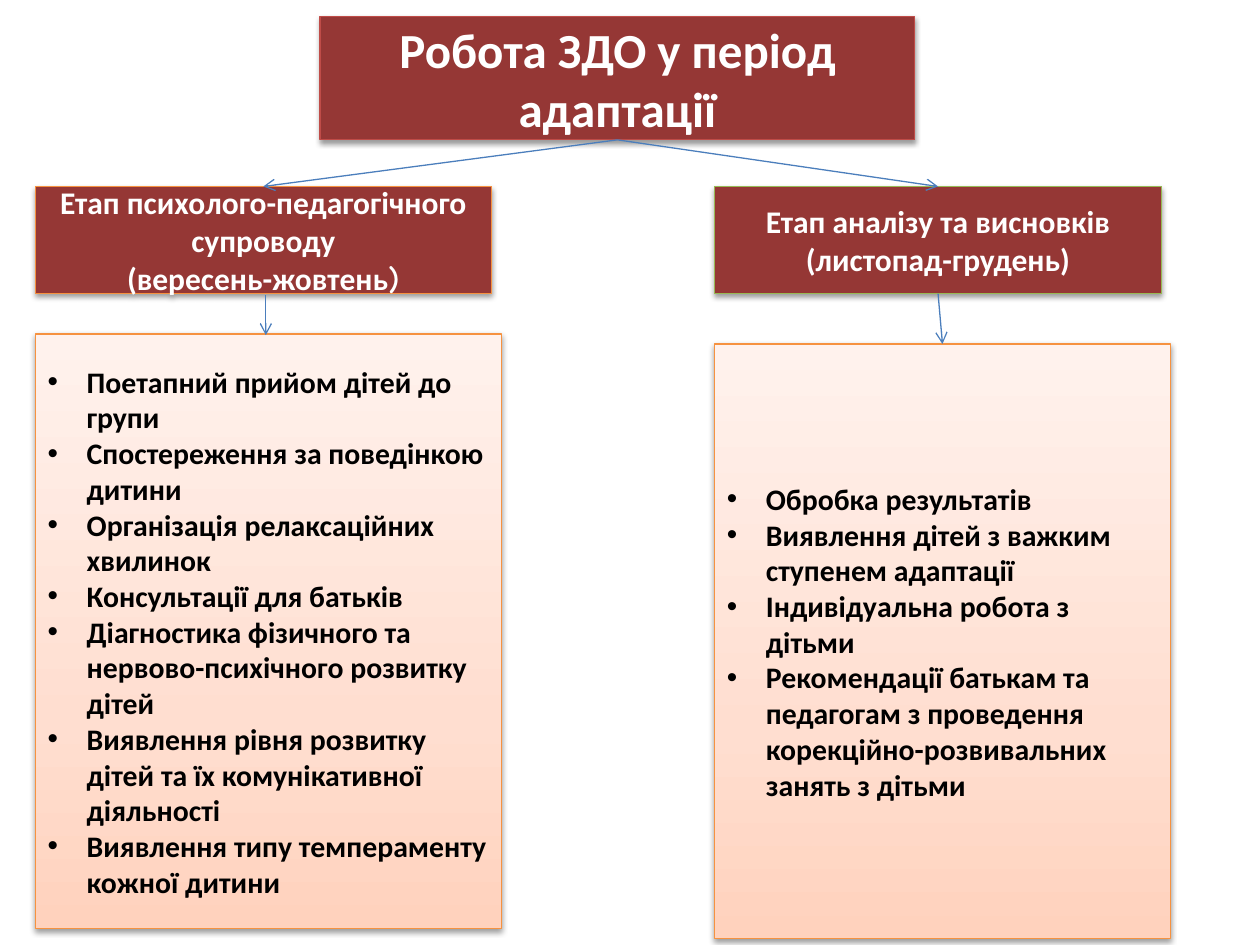
from copy import deepcopy

from lxml import etree
from pptx import Presentation
from pptx.dml.color import RGBColor
from pptx.enum.shapes import MSO_CONNECTOR, MSO_SHAPE
from pptx.enum.text import MSO_ANCHOR, MSO_AUTO_SIZE, PP_ALIGN
from pptx.oxml.ns import qn
from pptx.util import Inches, Pt

RECTANGLE = MSO_SHAPE.RECTANGLE
STRAIGHT = MSO_CONNECTOR.STRAIGHT
MIDDLE = MSO_ANCHOR.MIDDLE
NO_FIT = MSO_AUTO_SIZE.NONE
CENTER, LEFT = PP_ALIGN.CENTER, PP_ALIGN.LEFT
TOP_SIDE, BOTTOM_SIDE = 0, 2

COLORS = {
    "maroon": "953735", "red": "BF4C48", "orange": "F69240", "green": "98B955",
    "blue": "4B7EBC", "white": "FFFFFF", "black": "000000",
}
PANEL_STOPS = [(0, "FFD2BD"), (0.35, "FFDED0"), (1, "FFF2ED")]
FONT, BRACKET_FONT = "Calibri", "Comic Neue"
TITLE_FORMAT = {"size": Pt(28), "bold": True}
STAGE_FORMAT = {"size": Pt(18), "bold": True}
ITEM_FORMAT = {"size": Pt(17), "bold": True}
INDENT = Inches(0.31)

TITLE = [[("Робота ЗДО у період адаптації", FONT)]]
TITLE_AREA = (2.54, 0.13, 4.72, 0.98)
STAGES = [
    {
        "heading": [
            [("Етап психолого-педагогічного супроводу", FONT)],
            [("(вересень-жовтень", FONT), (")", BRACKET_FONT)],
        ],
        "heading_area": (0.28, 1.48, 3.62, 0.85),
        "border": "orange",
        "items": [
            "Поетапний прийом дітей до групи",
            "Спостереження за поведінкою дитини",
            "Організація релаксаційних хвилинок",
            "Консультації для батьків",
            "Діагностика фізичного та нервово-психічного розвитку дітей",
            "Виявлення рівня розвитку дітей та їх комунікативної діяльності",
            "Виявлення типу темпераменту кожної дитини",
        ],
        "panel_area": (0.28, 2.65, 3.7, 4.72),
        "free_arrow": (2.11, 2.34, 2.11, 2.66),
    },
    {
        "heading": [[("Етап аналізу та висновків (листопад-грудень)", FONT)]],
        "heading_area": (5.67, 1.48, 3.55, 0.85),
        "border": "green",
        "items": [
            "Обробка результатів",
            "Виявлення дітей з важким ступенем адаптації",
            "Індивідуальна робота з дітьми",
            "Рекомендації батькам та педагогам з проведення "
            "корекційно-розвивальних занять з дітьми",
        ],
        "panel_area": (5.67, 2.73, 3.62, 4.72),
        "free_arrow": None,
    },
]


def rgb(name):
    return RGBColor.from_string(COLORS[name])


def add_node(parent, tag, **attributes):
    return etree.SubElement(parent, qn(tag), attributes)


def add_shadow(box):
    box.shadow.inherit = False
    effects = box._element.spPr.find(qn("a:effectLst"))
    shadow = add_node(effects, "a:outerShdw", blurRad=str(Pt(3.1)), dist=str(Pt(1.6)),
                      dir="5400000", rotWithShape="0")
    color = add_node(shadow, "a:srgbClr", val=COLORS["black"])
    add_node(color, "a:alpha", val="38000")


def fill_panel(box):
    box.fill.gradient()
    stop_list = box._element.spPr.find(".//" + qn("a:gsLst"))
    stop_list.append(deepcopy(stop_list[0]))
    for stop, (position, color) in zip(box.fill.gradient_stops, PANEL_STOPS):
        stop.position = position
        stop.color.rgb = RGBColor.from_string(color)
    box.fill.gradient_angle = 90


def style_box(box, border):
    box.line.color.rgb = rgb(border)
    box.line.width = Pt(0.75)
    add_shadow(box)
    frame = box.text_frame
    frame.auto_size = NO_FIT
    frame.word_wrap = True
    frame.vertical_anchor = MIDDLE


def write_text(box, paragraphs, font_format, color, alignment):
    frame = box.text_frame
    for index, spans in enumerate(paragraphs):
        para = frame.add_paragraph() if index else frame.paragraphs[0]
        para.alignment = alignment
        for text, font_name in spans:
            span = para.add_run()
            span.text = text
            span.font.name = font_name
            span.font.color.rgb = rgb(color)
            for name, value in font_format.items():
                setattr(span.font, name, value)


def add_bullets(box):
    for para in box.text_frame.paragraphs:
        properties = para._p.get_or_add_pPr()
        properties.set("marL", str(INDENT))
        properties.set("indent", str(-INDENT))
        add_node(properties, "a:buFont", typeface="Arial")
        add_node(properties, "a:buChar", char="•")


def add_box(page, area):
    return page.shapes.add_shape(RECTANGLE, *map(Inches, area))


def fill_heading(box, text, font_format, border):
    box.fill.solid()
    box.fill.fore_color.rgb = rgb("maroon")
    style_box(box, border)
    write_text(box, text, font_format, "white", CENTER)


def add_arrow(page, start=None, end=None, points=(0, 0, 0, 0)):
    arrow = page.shapes.add_connector(STRAIGHT, *map(Inches, points))
    if start is not None:
        arrow.begin_connect(start, BOTTOM_SIDE)
        arrow.end_connect(end, TOP_SIDE)
    arrow.line.color.rgb = rgb("blue")
    arrow.line.width = Pt(0.75)
    add_node(arrow.line._get_or_add_ln(), "a:tailEnd", type="arrow")
    add_node(arrow._element.spPr, "a:effectLst")


def main():
    deck = Presentation()
    deck.slide_width, deck.slide_height = Inches(10), Inches(7.5)
    page = deck.slides.add_slide(deck.slide_layouts[5])

    title = page.shapes.title
    title.left, title.top, title.width, title.height = map(Inches, TITLE_AREA)
    fill_heading(title, TITLE, TITLE_FORMAT, "red")

    headings, panels = [], []
    for stage in STAGES:
        heading = add_box(page, stage["heading_area"])
        fill_heading(heading, stage["heading"], STAGE_FORMAT, stage["border"])
        headings.append(heading)

    for stage in STAGES:
        panel = add_box(page, stage["panel_area"])
        fill_panel(panel)
        style_box(panel, "orange")
        items = [[(item, FONT)] for item in stage["items"]]
        write_text(panel, items, ITEM_FORMAT, "black", LEFT)
        add_bullets(panel)
        panels.append(panel)

    for stage, heading, panel in zip(STAGES, headings, panels):
        add_arrow(page, title, heading)
        if stage["free_arrow"]:
            add_arrow(page, points=stage["free_arrow"])
        else:
            add_arrow(page, heading, panel)

    deck.save("out.pptx")


if __name__ == "__main__":
    main()
